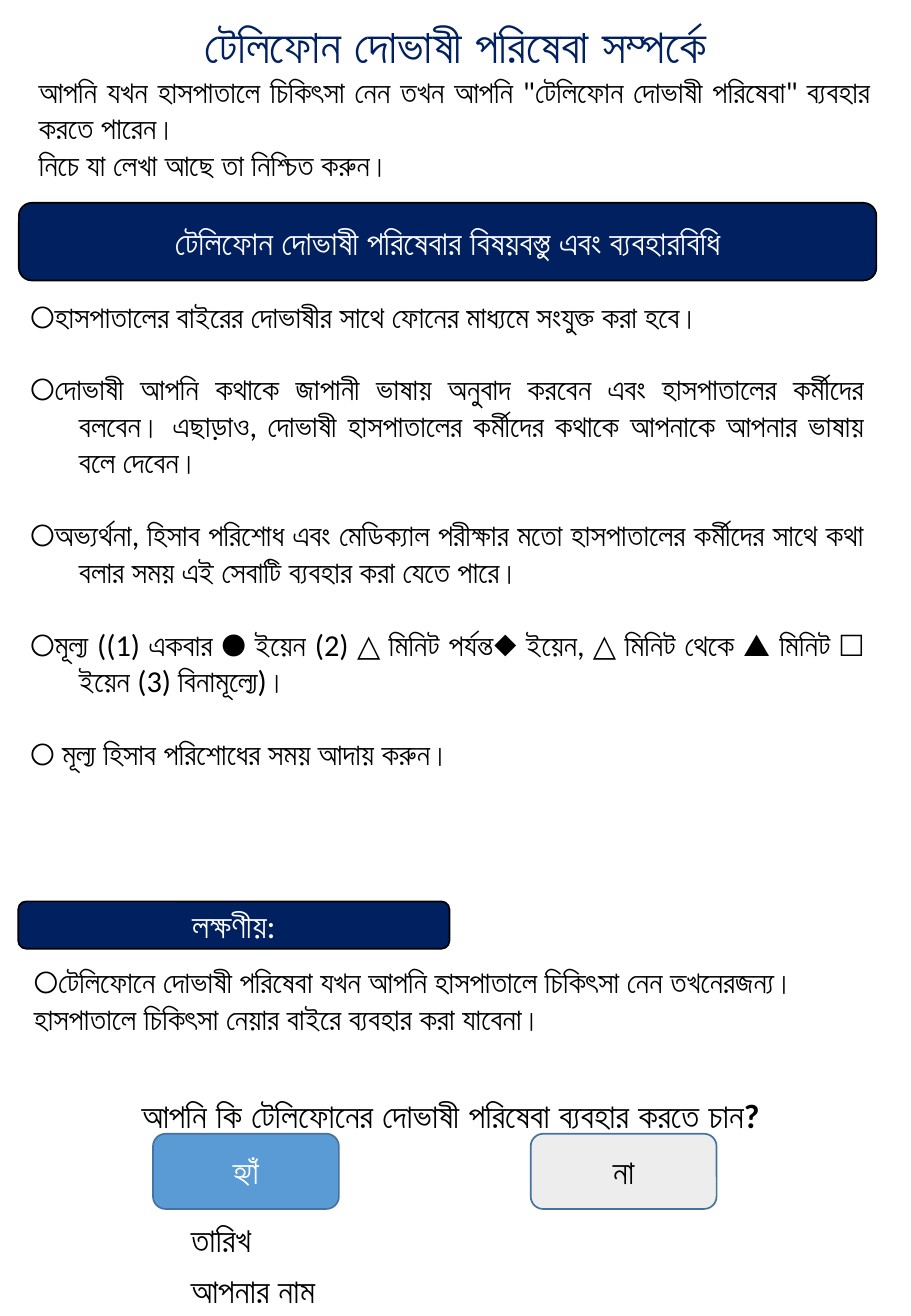
from lxml.etree import SubElement
from pptx import Presentation
from pptx.dml.color import RGBColor
from pptx.enum.shapes import MSO_SHAPE as Shape
from pptx.enum.text import MSO_ANCHOR as Anchor, MSO_AUTO_SIZE as AutoSize, PP_ALIGN as Align
from pptx.oxml.ns import qn
from pptx.util import Pt

NAVY = RGBColor(0x00, 0x20, 0x60)
BLUE = RGBColor(0x5B, 0x9B, 0xD5)
EDGE_BLUE = RGBColor(0x43, 0x73, 0x9E)
PALE_GRAY = RGBColor(0xED, 0xED, 0xED)
BLACK = RGBColor(0x00, 0x00, 0x00)
WHITE = RGBColor(0xFF, 0xFF, 0xFF)

HANG = 28.8
LABEL_INDENT = 94.5
TITLE_AND_CONTENT = 1

INTRO = [
    'আপনি যখন হাসপাতালে চিকিৎসা নেন তখন আপনি "টেলিফোন দোভাষী পরিষেবা" ব্যবহার করতে পারেন।',
    "নিচে যা লেখা আছে তা নিশ্চিত করুন।",
]
SERVICE_POINTS = [
    "○হাসপাতালের বাইরের দোভাষীর সাথে ফোনের মাধ্যমে সংযুক্ত করা হবে।",
    "○দোভাষী আপনি কথাকে জাপানী ভাষায় অনুবাদ করবেন এবং হাসপাতালের কর্মীদের বলবেন। "
    "এছাড়াও, দোভাষী হাসপাতালের কর্মীদের কথাকে আপনাকে আপনার ভাষায় বলে দেবেন।",
    "○অভ্যর্থনা, হিসাব পরিশোধ এবং মেডিক্যাল পরীক্ষার মতো হাসপাতালের কর্মীদের সাথে কথা "
    "বলার সময় এই সেবাটি ব্যবহার করা যেতে পারে।",
    "○মূল্য ((1) একবার ● ইয়েন (2) △ মিনিট পর্যন্ত◆ ইয়েন, △ মিনিট থেকে ▲ মিনিট □ "
    "ইয়েন (3) বিনামূল্যে)।",
    "○ মূল্য হিসাব পরিশোধের সময় আদায় করুন।",
]
NOTICE = [
    "○টেলিফোনে দোভাষী পরিষেবা যখন আপনি হাসপাতালে চিকিৎসা নেন তখনেরজন্য।",
    "হাসপাতালে চিকিৎসা নেয়ার বাইরে ব্যবহার করা যাবেনা।",
]


class Flyer:
    font = "Calibri"

    def __init__(self, width, height):
        self.deck = Presentation()
        self.deck.slide_width = Pt(width)
        self.deck.slide_height = Pt(height)
        self.page = self.deck.slides.add_slide(self.deck.slide_layouts[TITLE_AND_CONTENT])

    def fill_text(self, box, lines, size, color=BLACK, align=Align.JUSTIFY, bold=False,
                  anchor=Anchor.TOP, gap=0, left=0, hang=0):
        """Fill a box with one paragraph per line, gap points apart."""
        frame = box.text_frame
        frame.text = "\n".join(lines)
        frame.word_wrap = True
        frame.auto_size = AutoSize.NONE
        frame.vertical_anchor = anchor
        for number, para in enumerate(frame.paragraphs):
            para.alignment = align
            para.space_before = Pt(gap if number else 0)
            props = para._p.get_or_add_pPr()
            props.set("marL", str(Pt(left + hang)))
            props.set("indent", str(-Pt(hang)))
            SubElement(props, qn("a:buNone"))
            for span in para.runs:
                span.font.name = self.font
                span.font.size = Pt(size)
                span.font.bold = bold
                span.font.color.rgb = color

    def place(self, box, area):
        box.left, box.top, box.width, box.height = map(Pt, area)

    def title(self, area, text, **style):
        box = self.page.shapes.title
        self.place(box, area)
        self.fill_text(box, [text], **style)

    def body(self, area, lines, **style):
        box = self.page.placeholders[1]
        self.place(box, area)
        self.fill_text(box, lines, **style)

    def text(self, area, lines, **style):
        box = self.page.shapes.add_textbox(*map(Pt, area))
        self.fill_text(box, lines, **style)

    def panel(self, area, text, fill, edge, color):
        box = self.page.shapes.add_shape(Shape.ROUNDED_RECTANGLE, *map(Pt, area))
        box.shadow.inherit = False
        box.fill.solid()
        box.fill.fore_color.rgb = fill
        box.line.color.rgb = edge
        box.line.width = Pt(1)
        self.fill_text(box, [text], size=20, color=color, align=Align.CENTER,
                       anchor=Anchor.MIDDLE)


def main():
    flyer = Flyer(540, 779.8)
    flyer.title((0, 5.8, 540, 41), "টেলিফোন দোভাষী পরিষেবা সম্পর্কে",
                size=28, color=NAVY, align=Align.CENTER, bold=True)
    flyer.text((15.8, 39.6, 507, 72.7), INTRO, size=18)
    flyer.panel((11.2, 120.2, 508.3, 46), "টেলিফোন দোভাষী পরিষেবার বিষয়বস্তু এবং ব্যবহারবিধি",
                NAVY, BLACK, WHITE)
    flyer.body((10.8, 172.8, 508.3, 269.3), SERVICE_POINTS, size=18, gap=21.6, hang=HANG)

    flyer.panel((10.8, 534.2, 255.6, 28), "লক্ষণীয়:", NAVY, BLACK, WHITE)
    flyer.text((13, 567.4, 508.3, 51), NOTICE, size=18, hang=HANG)

    flyer.text((-2.9, 645.1, 540, 31.7), ["আপনি কি টেলিফোনের দোভাষী পরিষেবা ব্যবহার করতে চান?"],
               size=20, align=Align.CENTER, bold=True)
    answers = [(90.7, "হ্যাঁ", BLUE, WHITE), (314.6, "না", PALE_GRAY, BLACK)]
    for left, answer, fill, color in answers:
        flyer.panel((left, 671.8, 110.2, 44.6), answer, fill, EDGE_BLUE, color)
    flyer.text((11.5, 718.6, 516.2, 61.2), ["তারিখ", "আপনার নাম"],
               size=20, align=Align.LEFT, gap=6, left=LABEL_INDENT)
    flyer.deck.save("out.pptx")


if __name__ == "__main__":
    main()
